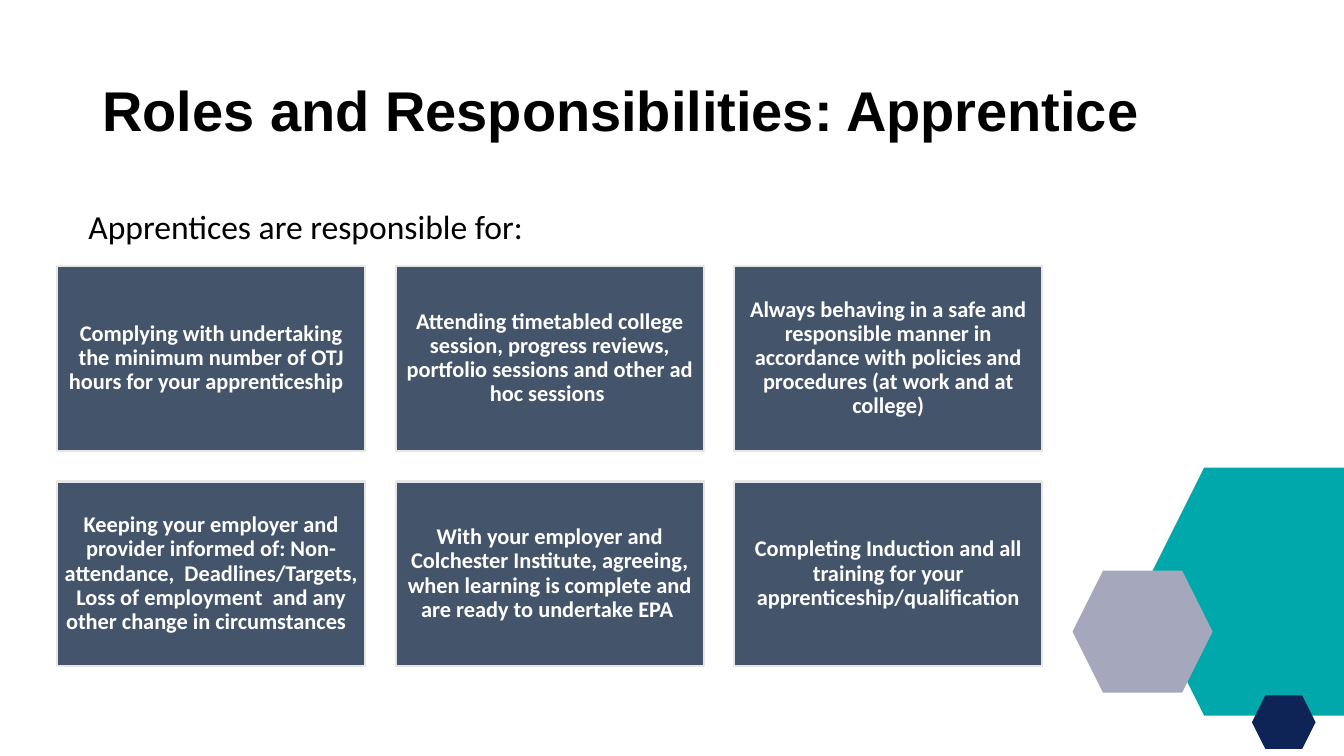
import pptx
import pptx.util
import pptx.dml.color
import pptx.enum.shapes
import pptx.enum.text

Pt = pptx.util.Pt
SHAPE = pptx.enum.shapes.MSO_SHAPE
ALIGN = pptx.enum.text.PP_ALIGN
ANCHOR = pptx.enum.text.MSO_ANCHOR

DUTIES = [
    "Complying with undertaking the minimum number of OTJ hours for your apprenticeship  ",
    "Attending timetabled college session, progress reviews, portfolio sessions "
    "and other ad hoc sessions ",
    "Always behaving in a safe and responsible manner in accordance with policies "
    "and procedures (at work and at college)",
    "Keeping your employer and provider informed of: Non-attendance,  Deadlines/Targets, "
    "Loss of employment  and any other change in circumstances  ",
    "With your employer and Colchester Institute, agreeing, when learning is complete "
    "and are ready to undertake EPA ",
    "Completing Induction and all training for your apprenticeship/qualification",
]


def colour(hex_code):
    return pptx.dml.color.RGBColor.from_string(hex_code)


def write(shape, text, size, font="Calibri", ink="000000", bold=False,
          align=ALIGN.LEFT, anchor=ANCHOR.TOP, spacing=1.0, inset=None):
    frame = shape.text_frame
    frame.auto_size = pptx.enum.text.MSO_AUTO_SIZE.NONE
    frame.word_wrap = True
    frame.vertical_anchor = anchor
    if inset is not None:
        frame.margin_left = frame.margin_right = Pt(inset)
        frame.margin_top = frame.margin_bottom = Pt(inset)
    paragraph = frame.paragraphs[0]
    paragraph.alignment = align
    paragraph.line_spacing = spacing
    run = paragraph.add_run()
    run.text = text
    run.font.name = font
    run.font.size = Pt(size)
    run.font.bold = bold
    run.font.color.rgb = colour(ink)


def add_block(slide, kind, left, top, width, height, fill, line=None):
    block = slide.shapes.add_shape(kind, Pt(left), Pt(top), Pt(width), Pt(height))
    block.shadow.inherit = False
    block.fill.solid()
    block.fill.fore_color.rgb = colour(fill)
    if line:
        block.line.color.rgb = colour(line)
        block.line.width = Pt(1.5)
    else:
        block.line.fill.background()
    return block


def add_hexagons(slide, left, top):
    # Each entry: offset from the cluster's corner, size, fill
    for dx, dy, width, height, fill in [
        (49.7, 0, 201.6, 177.1, "00A8AB"),
        (0, 73.5, 100.1, 87.1, "A5A7BC"),
        (128.2, 162.7, 45.4, 38.2, "0E2356"),
    ]:
        add_block(slide, SHAPE.HEXAGON, left + dx, top + dy, width, height, fill)


def add_heading(slide, left, top, width, height):
    title = slide.shapes.title
    title.left, title.top = Pt(left), Pt(top)
    title.width, title.height = Pt(width), Pt(height)
    write(title, "Roles and Responsibilities: Apprentice", 40, font="Arial",
          bold=True, anchor=ANCHOR.MIDDLE, spacing=0.9)


def add_intro(slide, left, top, width, height):
    intro = slide.shapes.add_textbox(Pt(left), Pt(top), Pt(width), Pt(height))
    write(intro, "Apprentices are responsible for: ", 24)


def add_duty_grid(slide, left, top, width, height, columns=3, rows=2, gap=22):
    card_width = (width - gap * (columns - 1)) / columns
    card_height = (height - gap * (rows - 1)) / rows
    for index, duty in enumerate(DUTIES):
        row, column = divmod(index, columns)
        card = add_block(slide, SHAPE.RECTANGLE,
                         left + column * (card_width + gap),
                         top + row * (card_height + gap),
                         card_width, card_height, "44546A", line="E7E6E6")
        write(card, duty, 16, ink="FFFFFF", bold=True, align=ALIGN.CENTER,
              anchor=ANCHOR.MIDDLE, spacing=0.9, inset=5)


def main():
    deck = pptx.Presentation()
    deck.slide_width, deck.slide_height = Pt(960), Pt(540)
    slide = deck.slides.add_slide(deck.slide_layouts[5])  # title only

    # Corner decoration
    add_hexagons(slide, 766.1, 334.1)
    # Title and lead-in
    add_heading(slide, 66, 28.8, 828, 104.4)
    add_intro(slide, 56, 143.3, 508, 36)
    # Six responsibilities
    add_duty_grid(slide, 41, 190, 703.4, 285.8)

    deck.save("out.pptx")


if __name__ == "__main__":
    main()
